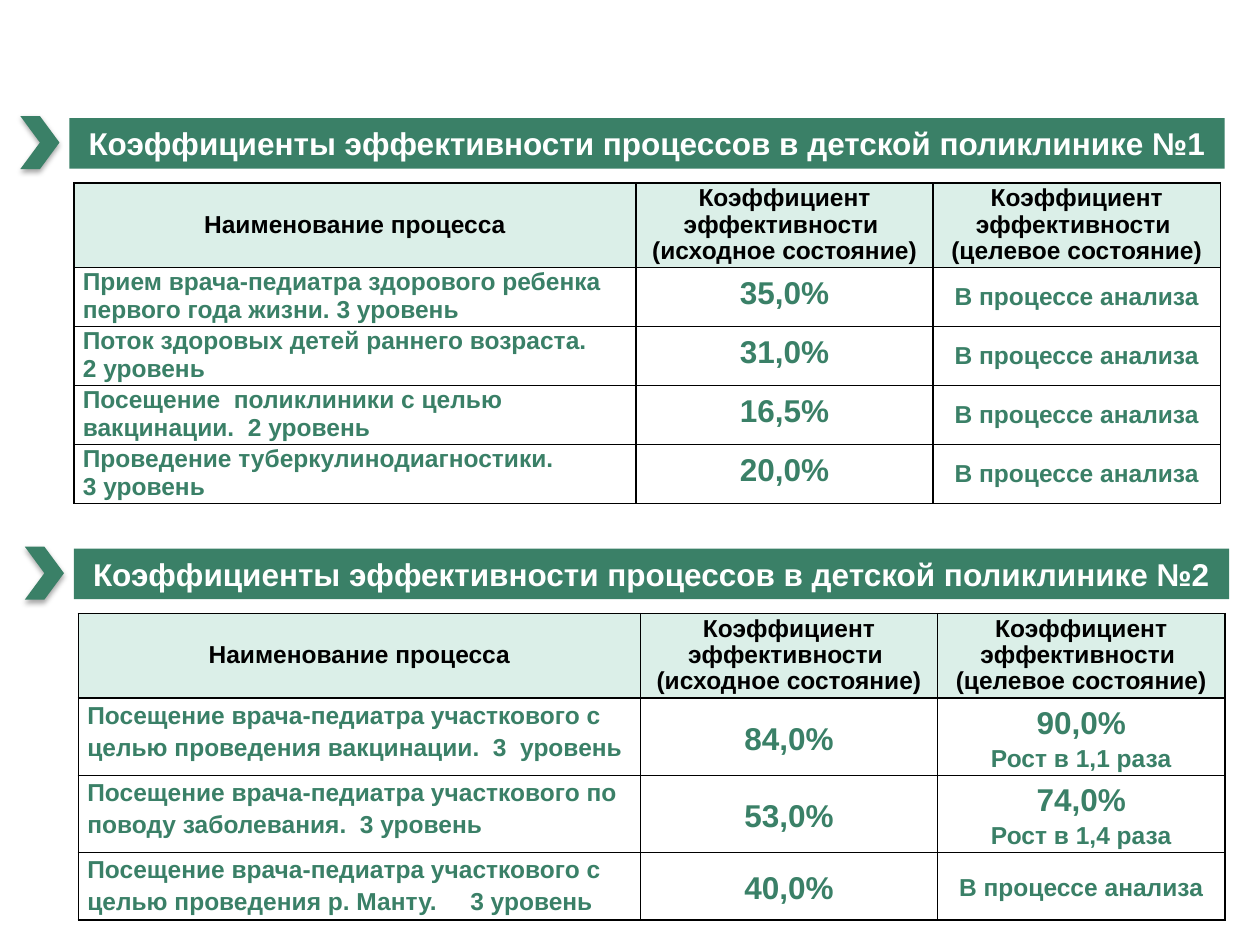
from lxml import etree
from pptx import Presentation
from pptx.dml.color import RGBColor
from pptx.enum.shapes import MSO_SHAPE
from pptx.enum.text import MSO_ANCHOR, MSO_AUTO_SIZE, PP_ALIGN
from pptx.oxml import parse_xml
from pptx.oxml.ns import nsdecls, qn
from pptx.util import Cm, Pt

CENTER, LEFT = PP_ALIGN.CENTER, PP_ALIGN.LEFT
MIDDLE, TOP = MSO_ANCHOR.MIDDLE, MSO_ANCHOR.TOP
FIT_SHAPE = MSO_AUTO_SIZE.SHAPE_TO_FIT_TEXT
RECTANGLE, CHEVRON = MSO_SHAPE.RECTANGLE, MSO_SHAPE.CHEVRON

GREEN = RGBColor(0x3A, 0x80, 0x67)
MINT = RGBColor(0xDB, 0xEF, 0xE8)
WHITE = RGBColor(0xFF, 0xFF, 0xFF)
BLACK = RGBColor(0x00, 0x00, 0x00)

FONT = "Arial"
COLUMN_WIDTHS = (11.33, 5.99, 5.79)
HEADER_HEIGHT, ROW_HEIGHT = 1.7, 1.19
LEVEL_TAB = Cm(7.72)

COEFFICIENT = "Коэффициент эффективности "
HEADER = (
    ["Наименование процесса"],
    [COEFFICIENT, "(исходное состояние)"],
    [COEFFICIENT, "(целевое состояние)"],
)
IN_ANALYSIS = ["В процессе анализа"]
CLINIC_1 = (
    (["Прием врача-педиатра здорового ребенка первого года жизни. 3 уровень"],
     ["35,0%"], IN_ANALYSIS),
    (["Поток здоровых детей раннего возраста.", "2 уровень"],
     ["31,0%"], IN_ANALYSIS),
    (["Посещение  поликлиники с целью вакцинации.  2 уровень"],
     ["16,5%"], IN_ANALYSIS),
    (["Проведение туберкулинодиагностики.", "3 уровень"],
     ["20,0%"], IN_ANALYSIS),
)
CLINIC_2 = (
    (["Посещение врача-педиатра участкового с целью проведения вакцинации.  3  уровень"],
     ["84,0%"], ["90,0%", "Рост в 1,1 раза"]),
    (["Посещение врача-педиатра участкового по поводу заболевания.  3 уровень"],
     ["53,0%"], ["74,0%", "Рост в 1,4 раза"]),
    (["Посещение врача-педиатра участкового с целью проведения р. Манту.\t3 уровень"],
     ["40,0%"], IN_ANALYSIS),
)


def write_paragraph(paragraph, text, size, color, align):
    """Fill a paragraph with one bold run."""
    paragraph.alignment = align
    if "\t" in text:
        tabs = etree.SubElement(paragraph._p.get_or_add_pPr(), qn("a:tabLst"))
        etree.SubElement(tabs, qn("a:tab"), pos=str(LEVEL_TAB), algn="l")
    run = paragraph.add_run()
    run.text = text
    run.font.name, run.font.size, run.font.bold = FONT, Pt(size), True
    run.font.color.rgb = color


def outline_cell(cell):
    """Draw a thin black border on all four sides of a cell."""
    properties = cell._tc.get_or_add_tcPr()
    for side in ("lnL", "lnR", "lnT", "lnB"):
        properties.append(parse_xml(
            f'<a:{side} {nsdecls("a")} w="{Pt(1)}"><a:solidFill>'
            f'<a:srgbClr val="{BLACK}"/></a:solidFill></a:{side}>'))


def fill_cell(cell, lines, fill, color, align, anchor, spacing):
    """Style a table cell and write its lines, with percentages larger."""
    outline_cell(cell)
    cell.fill.solid()
    cell.fill.fore_color.rgb = fill
    cell.vertical_anchor = anchor
    cell.margin_left = cell.margin_right = Cm(0.18)
    cell.margin_top = cell.margin_bottom = 0
    frame = cell.text_frame
    for index, line in enumerate(lines):
        paragraph = frame.add_paragraph() if index else frame.paragraphs[0]
        paragraph.line_spacing = spacing
        write_paragraph(paragraph, line, 18 if "%" in line else 14, color, align)


def add_process_table(slide, left, top, processes, spacing):
    """Place the table of process coefficients."""
    height = HEADER_HEIGHT + ROW_HEIGHT * len(processes)
    table = slide.shapes.add_table(
        len(processes) + 1, len(COLUMN_WIDTHS), Cm(left), Cm(top),
        Cm(sum(COLUMN_WIDTHS)), Cm(height)).table
    table.first_row = table.horz_banding = False
    for column, width in zip(table.columns, COLUMN_WIDTHS):
        column.width = Cm(width)
    for row in table.rows:
        row.height = Cm(ROW_HEIGHT)
    table.rows[0].height = Cm(HEADER_HEIGHT)
    for col, lines in enumerate(HEADER):
        fill_cell(table.cell(0, col), lines, MINT, BLACK, CENTER, MIDDLE, Pt(15))
    for row, process in enumerate(processes, start=1):
        for col, lines in enumerate(process):
            align, anchor = (CENTER, MIDDLE) if col else (LEFT, TOP)
            fill_cell(table.cell(row, col), lines, WHITE, GREEN, align, anchor, spacing)


def add_green_shape(slide, kind, left, top, width, height):
    """Add a flat green shape without an outline."""
    shape = slide.shapes.add_shape(kind, Cm(left), Cm(top), Cm(width), Cm(height))
    shape.shadow.inherit = False
    shape.fill.solid()
    shape.fill.fore_color.rgb = GREEN
    shape.line.fill.background()
    return shape


def add_heading(slide, left, top, title):
    """Place the title bar and the chevron with its soft shadow."""
    bar = add_green_shape(slide, RECTANGLE, left + 0.99, top + 0.04, 23.29, 1.02)
    bar.text_frame.word_wrap = True
    bar.text_frame.auto_size = FIT_SHAPE
    write_paragraph(bar.text_frame.paragraphs[0], title, 18, WHITE, CENTER)
    chevron = add_green_shape(slide, CHEVRON, left, top, 0.79, 1.07)
    effects = chevron._element.spPr.find(qn("a:effectLst"))
    effects.append(parse_xml(
        f'<a:outerShdw {nsdecls("a")} blurRad="{Pt(3)}" dist="{Pt(1.8)}" '
        f'dir="5400000" rotWithShape="0"><a:srgbClr val="{BLACK}">'
        '<a:alpha val="35000"/></a:srgbClr></a:outerShdw>'))


def add_clinic(slide, left, top, number, processes, spacing):
    """Place one clinic's heading and table from its top-left corner."""
    add_process_table(slide, left + 1.08, top + 1.35, processes, spacing)
    add_heading(slide, left, top,
                f"Коэффициенты эффективности процессов в детской поликлинике №{number}")


def main():
    """Build the slide with both clinics and save it."""
    presentation = Presentation()
    presentation.slide_width, presentation.slide_height = Cm(25.4), Cm(19.05)
    slide = presentation.slides.add_slide(presentation.slide_layouts[6])
    add_clinic(slide, 0.41, 2.34, 1, CLINIC_1, Pt(16))
    add_clinic(slide, 0.5, 11.02, 2, CLINIC_2, 1.15)
    presentation.save("out.pptx")


if __name__ == "__main__":
    main()
